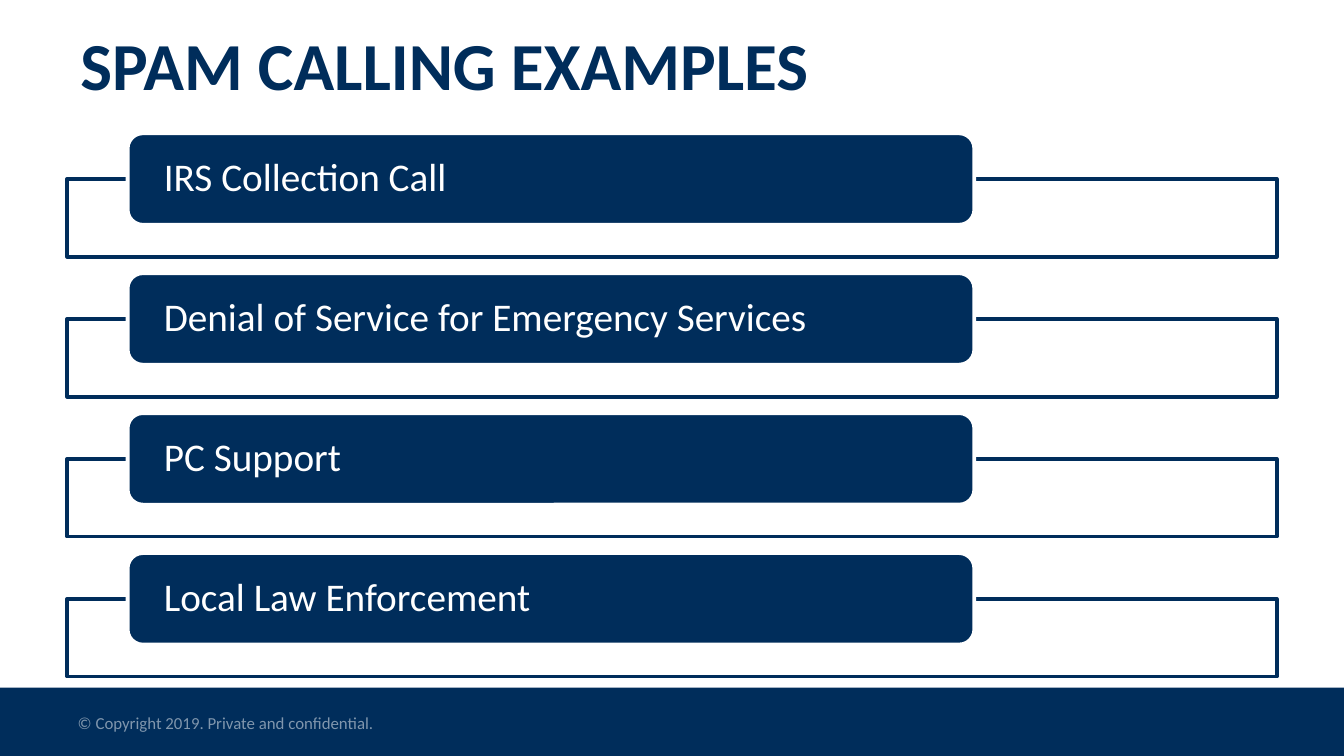
import pptx
import pptx.dml.color
import pptx.enum.shapes
import pptx.enum.text
import pptx.util

Cm, Pt = pptx.util.Cm, pptx.util.Pt
SHAPES = pptx.enum.shapes.MSO_SHAPE
ANCHOR = pptx.enum.text.MSO_ANCHOR
ALIGN = pptx.enum.text.PP_ALIGN

NAVY, WHITE, MUTED = "002D5B", "FFFFFF", "8096AD"
WIDTH, HEIGHT = 25.4, 14.29
EXAMPLES = [
    "IRS Collection Call",
    "Denial of Service for Emergency Services",
    "PC Support",
    "Local Law Enforcement",
]


def rgb(hex_color):
    return pptx.dml.color.RGBColor.from_string(hex_color)


def lengths(box):
    return [Cm(value) for value in box]


def add_block(slide, preset, box, fill, line=None):
    block = slide.shapes.add_shape(preset, *lengths(box))
    block.shadow.inherit = False
    block.fill.solid()
    block.fill.fore_color.rgb = rgb(fill)
    if line:
        block.line.color.rgb = rgb(line)
        block.line.width = Pt(2)
    else:
        block.line.fill.background()
    return block


def write(shape, text, size, color, bold=False, spacing=1.0, side_inset=0.25):
    """Put one left-aligned, vertically centred line of text in a shape."""
    frame = shape.text_frame
    frame.word_wrap = True
    frame.vertical_anchor = ANCHOR.MIDDLE
    frame.margin_left = frame.margin_right = Cm(side_inset)
    frame.margin_top = frame.margin_bottom = 0
    frame.text = text
    paragraph = frame.paragraphs[0]
    paragraph.alignment = ALIGN.LEFT
    paragraph.line_spacing = spacing
    paragraph.font.name = "Calibri"
    paragraph.font.size = Pt(size)
    paragraph.font.bold = bold
    paragraph.font.color.rgb = rgb(color)


def place_title(slide, box):
    title = slide.shapes.title
    title.left, title.top, title.width, title.height = lengths(box)
    write(title, "SPAM CALLING EXAMPLES", 36, NAVY, bold=True, spacing=0.8)


def add_footer(slide, box):
    left, top, width, height = box
    add_block(slide, SHAPES.RECTANGLE, box, NAVY)
    notice_box = (left + 1.22, top + 0.34, 8.59, 0.64)
    notice = slide.shapes.add_textbox(*lengths(notice_box))
    write(notice, "© Copyright 2019. Private and confidential.", 9, MUTED)


def add_examples(slide, box, examples):
    """Stack outlined frames, each with a label overlapping its top edge."""
    left, top, width, height = box
    label_height, frame_height = 1.73, 1.47
    unit_height = label_height / 2 + frame_height
    pitch = (height - unit_height) / (len(examples) - 1)
    for index, example in enumerate(examples):
        label_top = top + index * pitch
        frame_box = (left, label_top + label_height / 2, width, frame_height)
        add_block(slide, SHAPES.RECTANGLE, frame_box, WHITE, NAVY)
        label_box = (left + width * 0.05, label_top, width * 0.7, label_height)
        label = add_block(slide, SHAPES.ROUNDED_RECTANGLE, label_box, NAVY, WHITE)
        write(label, example, 21, WHITE, spacing=0.9, side_inset=0.6)


def main():
    presentation = pptx.Presentation()
    presentation.slide_width, presentation.slide_height = Cm(WIDTH), Cm(HEIGHT)
    slide = presentation.slides.add_slide(presentation.slide_layouts[5])
    add_footer(slide, (0, 13, WIDTH, HEIGHT - 13))
    add_examples(slide, (1.27, 2.52, 22.86, 10.27), EXAMPLES)
    place_title(slide, (1.27, 0.38, 22.86, 1.93))
    presentation.save("out.pptx")


if __name__ == "__main__":
    main()
